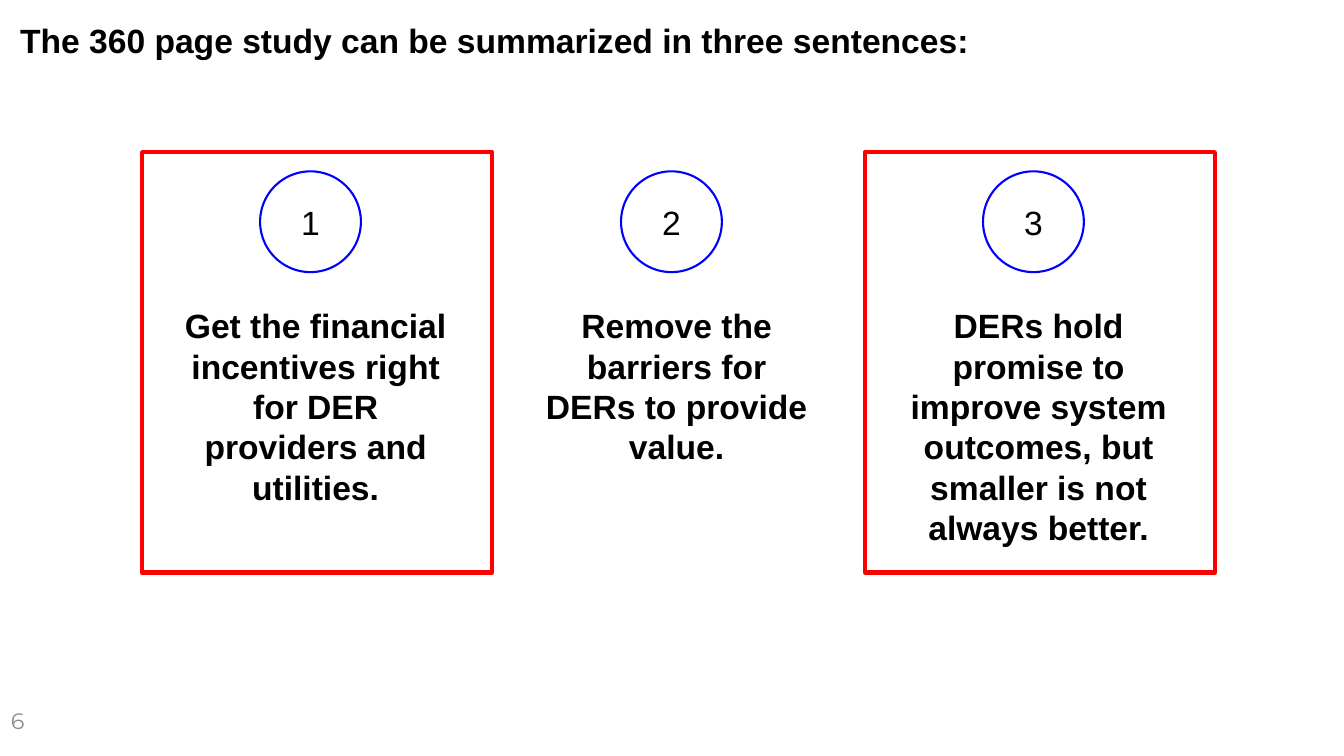
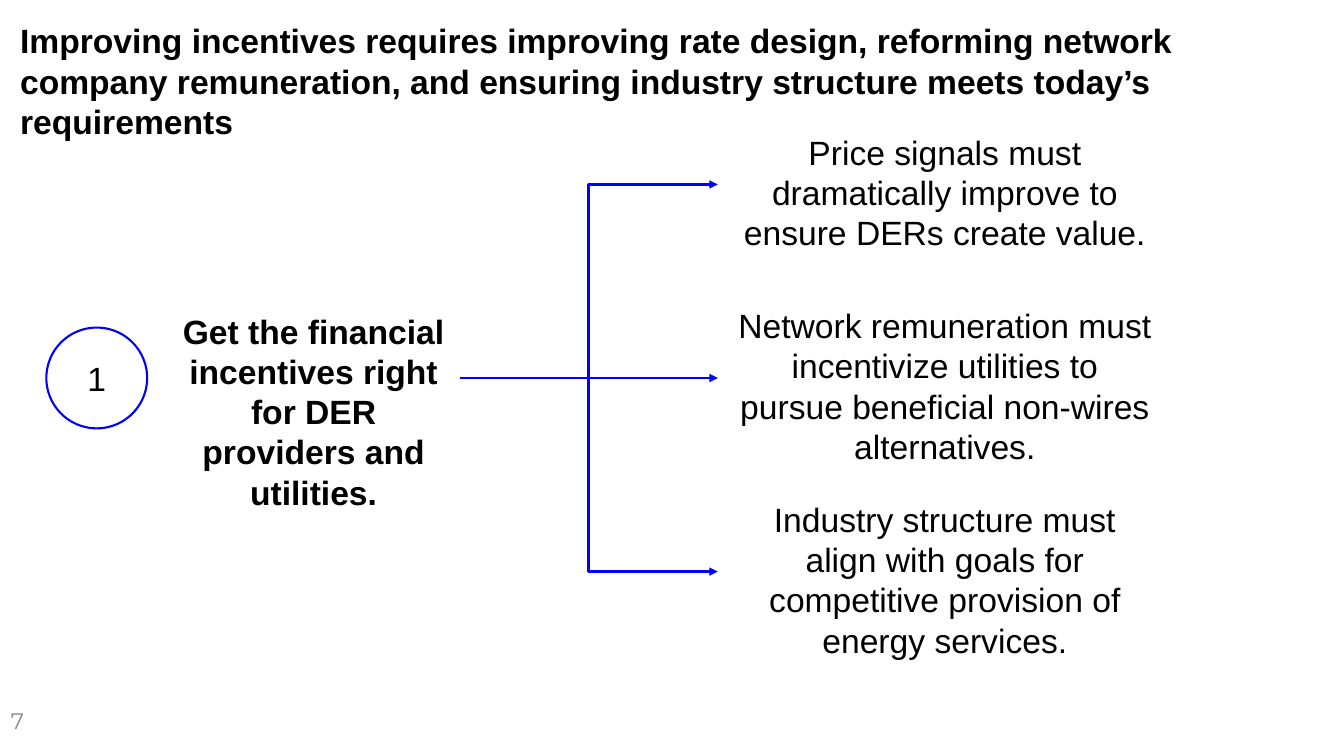
from dataclasses import dataclass

from lxml import etree
from pptx import Presentation
from pptx.dml.color import RGBColor
from pptx.enum.shapes import MSO_CONNECTOR, MSO_SHAPE
from pptx.enum.text import MSO_ANCHOR, PP_ALIGN
from pptx.oxml.ns import qn
from pptx.util import Emu, Pt

ELLIPSE, RECTANGLE = MSO_SHAPE.OVAL, MSO_SHAPE.RECTANGLE
STRAIGHT, ELBOW = MSO_CONNECTOR.STRAIGHT, MSO_CONNECTOR.ELBOW
TOP, MIDDLE = MSO_ANCHOR.TOP, MSO_ANCHOR.MIDDLE
LEFT, CENTER = PP_ALIGN.LEFT, PP_ALIGN.CENTER
LEFT_SIDE, RIGHT_SIDE = 1, 3
EMU_PER_PX = 9144
BLANK_LAYOUT = 6


@dataclass(frozen=True)
class Theme:
    ink: RGBColor = RGBColor(0, 0, 0)
    accent: RGBColor = RGBColor(0, 0, 255)
    highlight: RGBColor = RGBColor(255, 0, 0)
    muted: RGBColor = RGBColor(140, 140, 140)
    font: str = "Arial"
    number_font: str = "Montserrat"
    text_size: int = 24
    number_size: int = 16
    circle_line: float = 1.5
    arrow_line: float = 2
    frame_line: float = 3


THEME = Theme()
TEXT_INSETS = (20, 20, 10, 5)
DEFAULT_INSETS = (10, 5, 10, 5)
CIRCLE = 100
STATEMENT_WIDTH = 300
INCENTIVES = "Get the financial incentives right for DER providers and utilities."
SENTENCES = (
    INCENTIVES,
    "Remove the barriers for DERs to provide value.",
    "DERs hold promise to improve system outcomes, but smaller is not always better.",
)
REQUIREMENTS = (
    "Price signals must dramatically improve to ensure DERs create value.",
    "Network remuneration must incentivize utilities to pursue beneficial non-wires alternatives.",
    "Industry structure must align with goals for competitive provision of energy services.",
)


def px(*lengths):
    return [Emu(length * EMU_PER_PX) for length in lengths]


def write_text(shape, text, *, size=THEME.text_size, font=THEME.font, color=THEME.ink,
               bold=False, align=CENTER, anchor=TOP, insets=TEXT_INSETS):
    frame = shape.text_frame
    frame.word_wrap = True
    frame.vertical_anchor = anchor
    (frame.margin_left, frame.margin_top,
     frame.margin_right, frame.margin_bottom) = px(*insets)
    para = frame.paragraphs[0]
    para.alignment = align
    span = para.add_run()
    span.text = text
    span.font.size = Pt(size)
    span.font.name = font
    span.font.color.rgb = color
    span.font.bold = bold


def add_text(page, area, text, **text_format):
    box = page.shapes.add_textbox(*px(*area))
    write_text(box, text, **text_format)
    return box


def add_outline(page, kind, area, color, width):
    shape = page.shapes.add_shape(kind, *px(*area))
    shape.shadow.inherit = False
    shape.fill.background()
    shape.line.color.rgb = color
    shape.line.width = Pt(width)
    return shape


def add_number_circle(page, left, top, number):
    circle = add_outline(page, ELLIPSE, (left, top, CIRCLE, CIRCLE),
                         THEME.accent, THEME.circle_line)
    write_text(circle, str(number), anchor=MIDDLE, insets=DEFAULT_INSETS)


def add_arrow(page, kind, source, target):
    arrow = page.shapes.add_connector(kind, 0, 0, 0, 0)
    arrow.begin_connect(source, RIGHT_SIDE)
    arrow.end_connect(target, LEFT_SIDE)
    arrow.line.color.rgb = THEME.accent
    arrow.line.width = Pt(THEME.arrow_line)
    etree.SubElement(arrow.line._get_or_add_ln(), qn("a:tailEnd"), type="triangle")
    etree.SubElement(arrow._element.spPr, qn("a:effectLst"))


def add_page(deck, title, number):
    page = deck.slides.add_slide(deck.slide_layouts[BLANK_LAYOUT])
    add_text(page, (1, 695, 311, 40), str(number), size=THEME.number_size,
             font=THEME.number_font, color=THEME.muted, align=LEFT,
             anchor=MIDDLE, insets=DEFAULT_INSETS)
    add_text(page, (0, 0, 1250, 106), title, bold=True, align=LEFT)
    return page


def build_summary(deck):
    page = add_page(deck, "The 360 page study can be summarized in three sentences:", 6)
    for index, sentence in enumerate(SENTENCES):
        left = 158 + index * 717 // 2
        add_number_circle(page, left + (STATEMENT_WIDTH - CIRCLE) // 2, 170, index + 1)
        add_text(page, (left, 283, STATEMENT_WIDTH, 344), sentence, bold=True)
        if index != 1:
            add_outline(page, RECTANGLE, (left - 17, 151, 347, 417),
                        THEME.highlight, THEME.frame_line)


def build_incentives(deck):
    page = add_page(deck, "Improving incentives requires improving rate design, reforming "
                          "network company remuneration, and ensuring industry structure "
                          "meets today’s requirements", 7)
    top, height, pitch = 288, 174, 192
    add_number_circle(page, 46, top + (height - CIRCLE) // 2, 1)
    statement = add_text(page, (156, top, STATEMENT_WIDTH, height), INCENTIVES, bold=True)
    for offset, requirement in enumerate(REQUIREMENTS, start=-1):
        target = add_text(page, (712, top + offset * pitch, 440, height),
                          requirement, anchor=MIDDLE)
        add_arrow(page, ELBOW if offset else STRAIGHT, statement, target)


def main():
    deck = Presentation()
    deck.slide_width, deck.slide_height = px(1333, 750)
    build_summary(deck)
    build_incentives(deck)
    deck.save("out.pptx")


if __name__ == "__main__":
    main()
